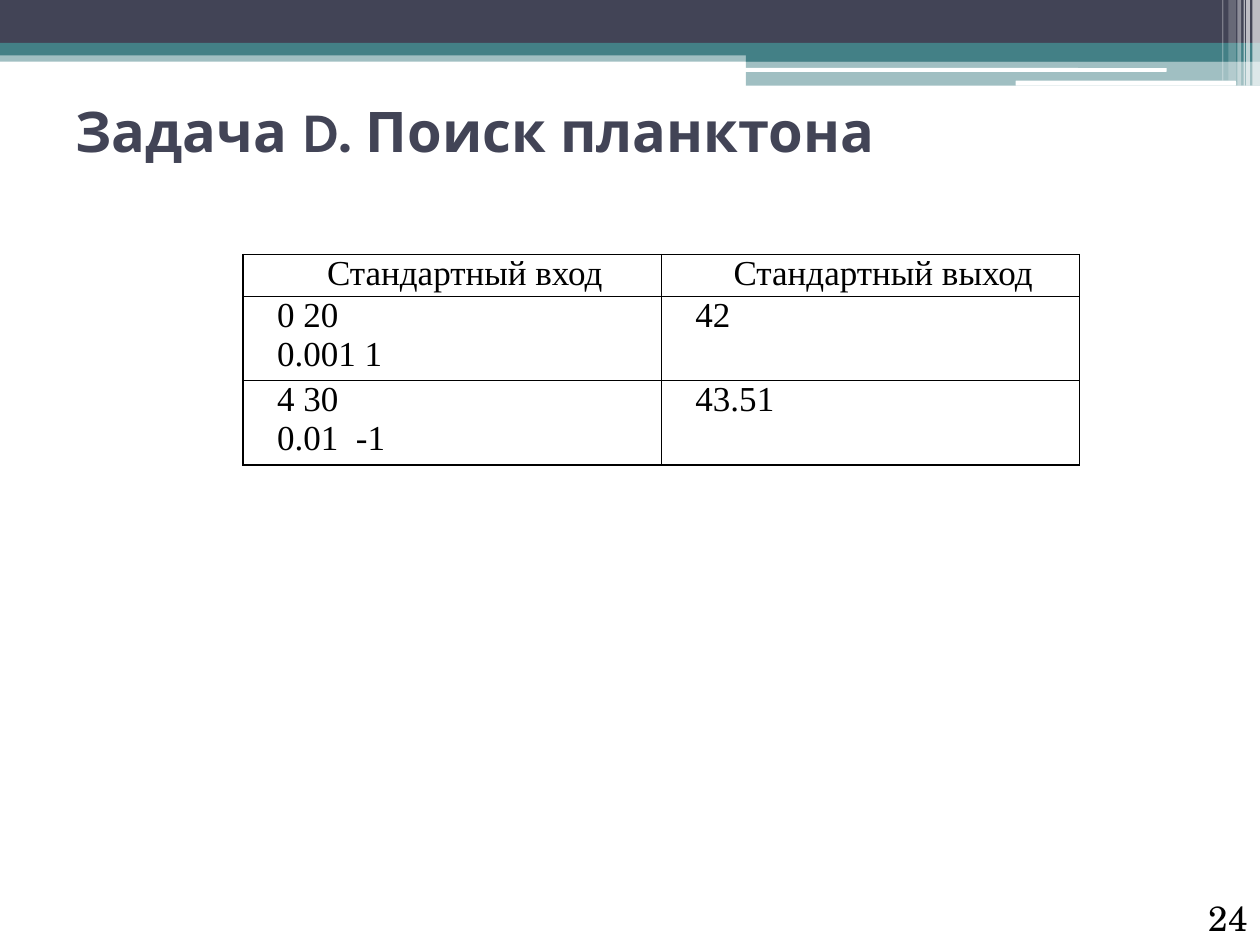
from lxml.etree import SubElement
from pptx import Presentation
from pptx.dml.color import RGBColor
from pptx.enum.shapes import MSO_SHAPE as Shape
from pptx.enum.text import MSO_ANCHOR as Anchor, PP_ALIGN as Align
from pptx.oxml.ns import qn
from pptx.util import Inches, Pt

WIDTH, HEIGHT = 10, 7.5
DARK, TEAL, WHITE, BLACK = "424456", "438086", "FFFFFF", "000000"

# Header bands: left, top, width, height, colour, opacity in percent
BANDS = [
    (0, 0.4, WIDTH, 0.09, TEAL, 50),
    (0, 0, WIDTH, 0.34, DARK, 100),
    (0, 0.34, WIDTH, 0.1, TEAL, 100),
    (5.92, 0.39, 4.08, 0.1, TEAL, 100),
    (5.92, 0.48, 4.08, 0.2, TEAL, 50),
]
# White rounded lines: left, top, width, height
LINES = [(5.91, 0.54, 3.35, 0.03), (8.06, 0.64, 1.75, 0.04)]
# White corner stripes: left, width, height, opacity in percent
STRIPES = [
    (9.94, 0.06, 0.68, 65),
    (9.89, 0.03, 0.68, 65),
    (9.87, 0.01, 0.68, 60),
    (9.82, 0.03, 0.68, 40),
    (9.75, 0.06, 0.64, 20),
    (9.7, 0.01, 0.64, 30),
]

TITLE_FORMAT = {"name": "Karla", "size": Pt(32), "bold": True}
NUMBER_FORMAT = {"name": "TeX Gyre Schola", "size": Pt(20)}
CELL_FORMAT = {"name": "Times New Roman", "size": Pt(20)}
CELL_MARGINS = {
    "margin_left": Inches(0.07),
    "margin_right": Inches(0.07),
    "margin_top": 0,
    "margin_bottom": 0,
}

SAMPLES = [
    ("Стандартный вход", "Стандартный выход"),
    ("0 20\n0.001 1", "42"),
    ("4 30\n0.01  -1", "43.51"),
]
TABLE_LEFT, TABLE_TOP = 1.93, 2.02
COLUMN_WIDTH, LINE_HEIGHT = 3.32, 0.31


def color(value):
    return RGBColor.from_string(value)


def set_attributes(target, values):
    for name, value in values.items():
        setattr(target, name, value)


def add_block(slide, kind, box, fill, opacity=100):
    shape = slide.shapes.add_shape(kind, *map(Inches, box))
    shape.shadow.inherit = False
    shape.line.fill.background()
    shape.fill.solid()
    shape.fill.fore_color.rgb = color(fill)
    if opacity < 100:
        rgb = shape.fill._xPr.find(".//" + qn("a:srgbClr"))
        SubElement(rgb, qn("a:alpha"), val=str(opacity * 1000))
    return shape


def write(paragraph, text, font_format, text_color, align):
    paragraph.alignment = align
    run = paragraph.add_run()
    run.text = text
    set_attributes(run.font, font_format)
    run.font.color.rgb = color(text_color)


def add_text(slide, box, text, font_format, text_color, align, anchor):
    frame = slide.shapes.add_textbox(*map(Inches, box)).text_frame
    set_attributes(frame, {"word_wrap": True, "vertical_anchor": anchor})
    write(frame.paragraphs[0], text, font_format, text_color, align)


def add_borders(cell):
    properties = cell._tc.get_or_add_tcPr()
    for position, side in enumerate(("a:lnL", "a:lnR", "a:lnT", "a:lnB")):
        line = properties.makeelement(qn(side), {"w": str(Pt(1))})
        properties.insert(position, line)
        fill = SubElement(line, qn("a:solidFill"))
        SubElement(fill, qn("a:srgbClr"), val=BLACK)


def fill_cell(cell, text, align):
    set_attributes(cell, CELL_MARGINS)
    cell.fill.background()
    frame = cell.text_frame
    for index, line in enumerate(text.split("\n")):
        paragraph = frame.add_paragraph() if index else frame.paragraphs[0]
        write(paragraph, line, CELL_FORMAT, BLACK, align)
        paragraph._p.get_or_add_pPr().set("indent", str(Inches(0.2)))
    add_borders(cell)


def add_samples(slide):
    line_counts = [max(text.count("\n") + 1 for text in row) for row in SAMPLES]
    columns = len(SAMPLES[0])
    box = (TABLE_LEFT, TABLE_TOP, columns * COLUMN_WIDTH, sum(line_counts) * LINE_HEIGHT)
    table = slide.shapes.add_table(len(SAMPLES), columns, *map(Inches, box)).table
    set_attributes(table, {"first_row": False, "horz_banding": False})
    for row_index, row in enumerate(SAMPLES):
        table.rows[row_index].height = Inches(line_counts[row_index] * LINE_HEIGHT)
        align = Align.JUSTIFY if row_index else Align.CENTER
        for column_index, text in enumerate(row):
            fill_cell(table.cell(row_index, column_index), text, align)


def add_header(slide):
    for *box, fill, opacity in BANDS:
        add_block(slide, Shape.RECTANGLE, box, fill, opacity)
    for box in LINES:
        add_block(slide, Shape.ROUNDED_RECTANGLE, box, WHITE)
    for left, width, height, opacity in STRIPES:
        add_block(slide, Shape.RECTANGLE, (left, 0, width, height), WHITE, opacity)


def main():
    presentation = Presentation()
    presentation.slide_width = Inches(WIDTH)
    presentation.slide_height = Inches(HEIGHT)
    slide = presentation.slides.add_slide(presentation.slide_layouts[6])

    add_header(slide)

    # Title
    add_text(slide, (0.05 * WIDTH, 0.68, 0.9 * WIDTH, 0.71), "Задача D. Поиск планктона",
             TITLE_FORMAT, DARK, Align.LEFT, Anchor.MIDDLE)

    # Sample input and output
    add_samples(slide)

    # Slide number
    add_text(slide, (WIDTH - 0.83, HEIGHT - 0.4, 0.83, 0.4), "24",
             NUMBER_FORMAT, BLACK, Align.RIGHT, Anchor.BOTTOM)

    presentation.save("out.pptx")


if __name__ == "__main__":
    main()
